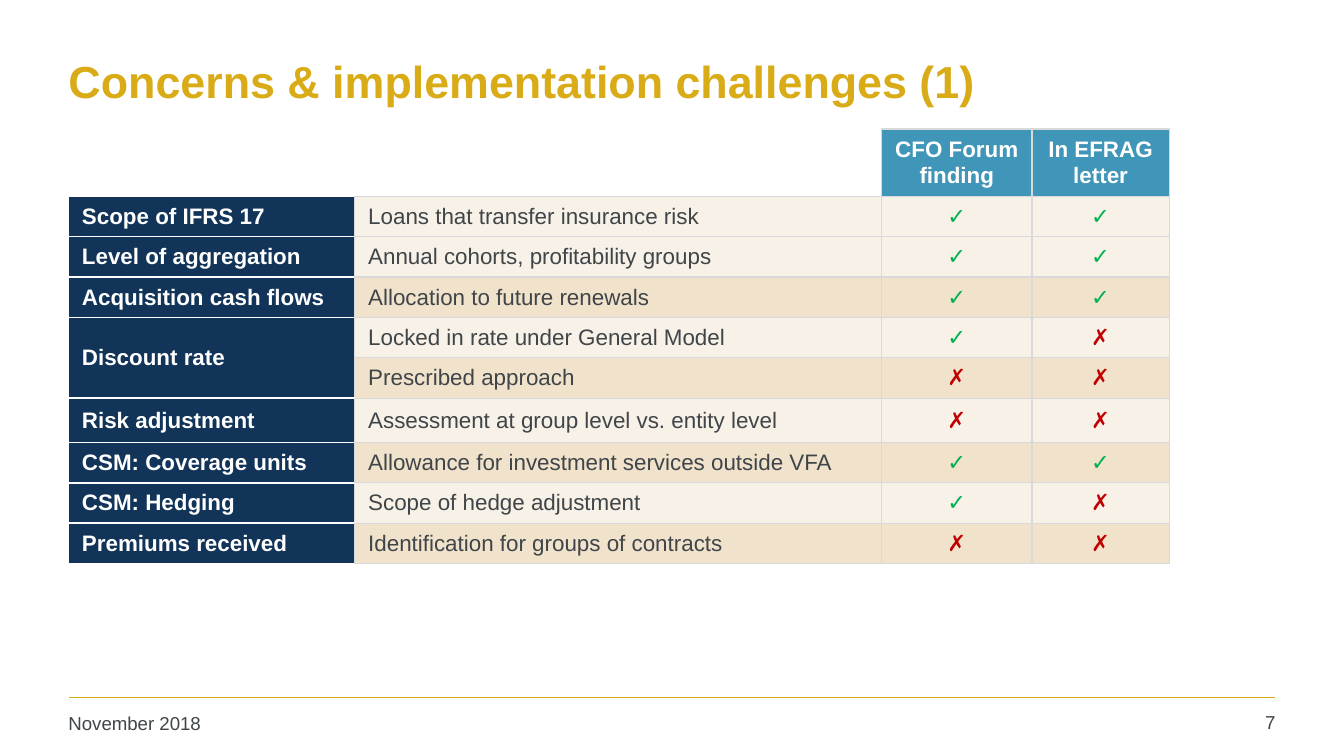
from typing import NamedTuple

from lxml.etree import SubElement
from pptx import Presentation
from pptx.dml.color import RGBColor
from pptx.enum.shapes import MSO_CONNECTOR
from pptx.enum.text import MSO_ANCHOR, PP_ALIGN
from pptx.oxml.ns import qn
from pptx.util import Inches, Pt

COLORS = {
    "gold": "D9AB16", "text": "3F4548", "white": "FFFFFF", "grid": "D9D9D9",
    "header": "4096B8", "topic": "113458", "light": "F8F1E8", "dark": "F1E2CC",
    "✓": "00B050", "✗": "C00000",
}
FONT = "Arial"
COLUMN_WIDTHS = [2.13, 3.92, 1.12, 1.02]
ROW_HEIGHTS = [0.44, 0.3, 0.3, 0.29, 0.22, 0.3, 0.33, 0.3, 0.3, 0.3]
TABLE_HEIGHT = 3.23
HEADERS = ["", "", "CFO Forum finding", "In EFRAG letter"]


class Label(NamedTuple):
    text: str
    left: float
    top: float
    width: float
    height: float
    size: float
    color: str
    bold: bool = False
    align: PP_ALIGN = PP_ALIGN.LEFT
    top_inset: float = 0.04


class Concern(NamedTuple):
    topic: str
    issue: str
    marks: str
    band: str


LABELS = [
    Label("Concerns & implementation challenges (1)", 0.43, 0.33, 9.07, 0.94, 24, "gold",
          bold=True, top_inset=0.07),
    Label("November 2018", 0.43, 5.26, 2.2, 0.27, 10, "text"),
    Label("7", 8.86, 5.25, 0.71, 0.28, 10, "text", align=PP_ALIGN.RIGHT),
]
CONCERNS = [
    Concern("Scope of IFRS 17", "Loans that transfer insurance risk", "✓✓", "light"),
    Concern("Level of aggregation", "Annual cohorts, profitability groups", "✓✓", "light"),
    Concern("Acquisition cash flows", "Allocation to future renewals", "✓✓", "dark"),
    Concern("Discount rate", "Locked in rate under General Model", "✓✗", "light"),
    Concern("", "Prescribed approach", "✗✗", "dark"),
    Concern("Risk adjustment", "Assessment at group level vs. entity level", "✗✗", "light"),
    Concern("CSM: Coverage units", "Allowance for investment services outside VFA", "✓✓", "dark"),
    Concern("CSM: Hedging", "Scope of hedge adjustment", "✓✗", "light"),
    Concern("Premiums received", "Identification for groups of contracts", "✗✗", "dark"),
]


def rgb(name: str) -> RGBColor:
    """Look up a named colour."""
    return RGBColor.from_string(COLORS[name])


def style(paragraph, size: float, color: str, bold: bool, align: PP_ALIGN) -> None:
    """Set the font and alignment of a paragraph."""
    paragraph.alignment = align
    font = paragraph.font
    font.name, font.size, font.bold = FONT, Pt(size), bold
    font.color.rgb = rgb(color)


def add_label(page, label: Label) -> None:
    """Add one text box."""
    box = page.shapes.add_textbox(Inches(label.left), Inches(label.top),
                                  Inches(label.width), Inches(label.height))
    frame = box.text_frame
    frame.word_wrap = True
    frame.margin_left = frame.margin_right = Inches(0.08)
    frame.margin_top, frame.margin_bottom = Inches(label.top_inset), Inches(0.04)
    paragraph = frame.paragraphs[0]
    paragraph.text = label.text
    style(paragraph, label.size, label.color, label.bold, label.align)


def set_borders(cell, white_sides: str) -> None:
    """Draw white lines on the given sides and grid lines on the others."""
    properties = cell._tc.get_or_add_tcPr()
    for side in "LRTB":
        color, width = ("white", 1) if side in white_sides else ("grid", 0.75)
        line = SubElement(properties, qn(f"a:ln{side}"), w=str(Pt(width)))
        SubElement(SubElement(line, qn("a:solidFill")), qn("a:srgbClr"), val=COLORS[color])


def fill_cell(cell, text: str, fill: str, color: str, bold: bool, align: PP_ALIGN) -> None:
    """Fill a cell and write its text."""
    cell.fill.solid()
    cell.fill.fore_color.rgb = rgb(fill)
    cell.vertical_anchor = MSO_ANCHOR.MIDDLE
    paragraph = cell.text_frame.paragraphs[0]
    paragraph.text = text
    style(paragraph, 12, color, bold, align)


def add_concern_table(page) -> None:
    """Add the table of concerns with its header row."""
    holder = page.shapes.add_table(len(ROW_HEIGHTS), len(COLUMN_WIDTHS), Inches(0.51), Inches(0.96),
                                   Inches(sum(COLUMN_WIDTHS)), Inches(TABLE_HEIGHT))
    table = holder.table
    table.first_row = table.horz_banding = False
    for column, width in zip(table.columns, COLUMN_WIDTHS):
        column.width = Inches(width)
    for row, height in zip(table.rows, ROW_HEIGHTS):
        row.height = Inches(height)
    holder.height = Inches(TABLE_HEIGHT)

    for index, (header, white_sides) in enumerate(zip(HEADERS, ["LRTB", "LT", "", ""])):
        cell = table.cell(0, index)
        set_borders(cell, white_sides)
        if header:
            fill_cell(cell, header, "header", "white", True, PP_ALIGN.CENTER)
        else:
            cell.fill.background()

    for index, concern in enumerate(CONCERNS, start=1):
        topic, issue, *marks = table.rows[index].cells
        set_borders(topic, "LTB")
        fill_cell(topic, concern.topic, "topic", "white", True, PP_ALIGN.LEFT)
        set_borders(issue, "")
        fill_cell(issue, concern.issue, concern.band, "text", False, PP_ALIGN.LEFT)
        for cell, mark in zip(marks, concern.marks):
            set_borders(cell, "")
            fill_cell(cell, mark, concern.band, mark, True, PP_ALIGN.CENTER)
        if not concern.topic:
            table.cell(index - 1, 0).merge(topic)


def add_footer_line(page) -> None:
    """Add the rule above the footer."""
    line = page.shapes.add_connector(MSO_CONNECTOR.STRAIGHT, Inches(0.51), Inches(5.19),
                                     Inches(9.49), Inches(5.19))
    line.line.color.rgb = rgb("gold")
    line.line.width = Pt(1)
    SubElement(line._element.spPr, qn("a:effectLst"))


def main() -> None:
    """Build and save the slide."""
    deck = Presentation()
    deck.slide_width = Inches(10)
    deck.slide_height = deck.slide_width * 9 // 16
    page = deck.slides.add_slide(deck.slide_layouts[6])
    add_footer_line(page)
    for label in LABELS:
        add_label(page, label)
    add_concern_table(page)
    deck.save("out.pptx")


if __name__ == "__main__":
    main()
